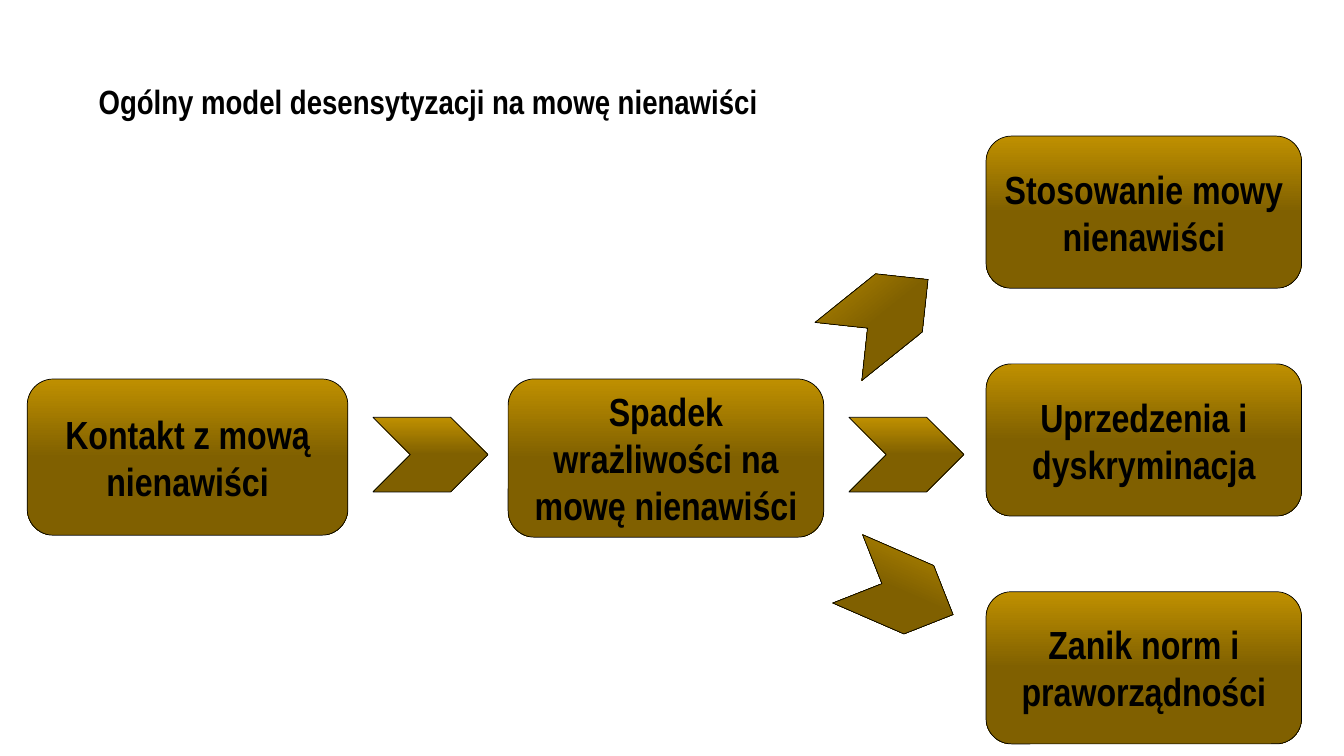
from pptx import Presentation
from pptx.dml.color import RGBColor
from pptx.enum.shapes import MSO_SHAPE
from pptx.enum.text import MSO_ANCHOR, PP_ALIGN
from pptx.util import Inches, Pt

ROUNDED_BOX = MSO_SHAPE.ROUNDED_RECTANGLE
NOTCHED_ARROW = MSO_SHAPE.NOTCHED_RIGHT_ARROW
MIDDLE = MSO_ANCHOR.MIDDLE
CENTER = PP_ALIGN.CENTER

FONT = "Arial Narrow"
BLACK = "000000"
GOLD = "BF9000"
DARK_GOLD = "806000"

OUTCOMES = [
    "Stosowanie mowy nienawiści",
    "Uprzedzenia i dyskryminacja",
    "Zanik norm i praworządności",
]
OUTCOME_TOP = 1.35
OUTCOME_STEP = 2.26

# left, top, rotation in degrees
ARROWS = [
    (3.7, 4.14, 0),
    (8.19, 2.76, 321.2),
    (8.42, 4.14, 0),
    (8.36, 5.5, 23.5),
]


def color(hex_string):
    return RGBColor.from_string(hex_string)


def write_text(shape, text, size):
    text_frame = shape.text_frame
    text_frame.word_wrap = True
    text_frame.vertical_anchor = MIDDLE
    text_frame.text = text
    paragraph = text_frame.paragraphs[0]
    font = paragraph.runs[0].font
    font.name = FONT
    font.size = Pt(size)
    font.bold = True
    font.color.rgb = color(BLACK)
    return paragraph


def add_title(slide, text):
    title = slide.shapes.add_textbox(
        Inches(0.88), Inches(0.3), Inches(11.5), Inches(1.45))
    write_text(title, text, 24).line_spacing = 0.9


def add_gold_shape(slide, kind, left, top, width, height):
    """Add a thinly outlined shape that darkens from its top to its middle."""
    shape = slide.shapes.add_shape(
        kind, Inches(left), Inches(top), Inches(width), Inches(height))
    shape.shadow.inherit = False
    shape.fill.gradient()
    shape.fill.gradient_angle = 270
    light, dark = shape.fill.gradient_stops
    light.position, light.color.rgb = 0, color(GOLD)
    dark.position, dark.color.rgb = 0.5, color(DARK_GOLD)
    shape.line.color.rgb = color(BLACK)
    shape.line.width = Pt(0.5)
    return shape


def add_box(slide, text, left, top, width, height):
    box = add_gold_shape(slide, ROUNDED_BOX, left, top, width, height)
    write_text(box, text, 28).alignment = CENTER


def add_arrow(slide, left, top, rotation):
    arrow = add_gold_shape(slide, NOTCHED_ARROW, left, top, 1.14, 0.74)
    arrow.adjustments[0] = 1
    arrow.adjustments[1] = 0.5
    arrow.rotation = rotation


def main():
    presentation = Presentation()
    presentation.slide_width = Inches(13.33)
    presentation.slide_height = Inches(7.5)
    slide = presentation.slides.add_slide(presentation.slide_layouts[6])

    add_title(slide, "Ogólny model desensytyzacji na mowę nienawiści")
    add_box(slide, "Kontakt z mową nienawiści", 0.27, 3.76, 3.18, 1.55)
    add_box(slide, "Spadek wrażliwości na mowę nienawiści",
            5.04, 3.76, 3.13, 1.57)
    for row, outcome in enumerate(OUTCOMES):
        add_box(slide, outcome, 9.78, OUTCOME_TOP + row * OUTCOME_STEP,
                3.13, 1.51)
    for left, top, rotation in ARROWS:
        add_arrow(slide, left, top, rotation)

    presentation.save("out.pptx")


if __name__ == "__main__":
    main()
